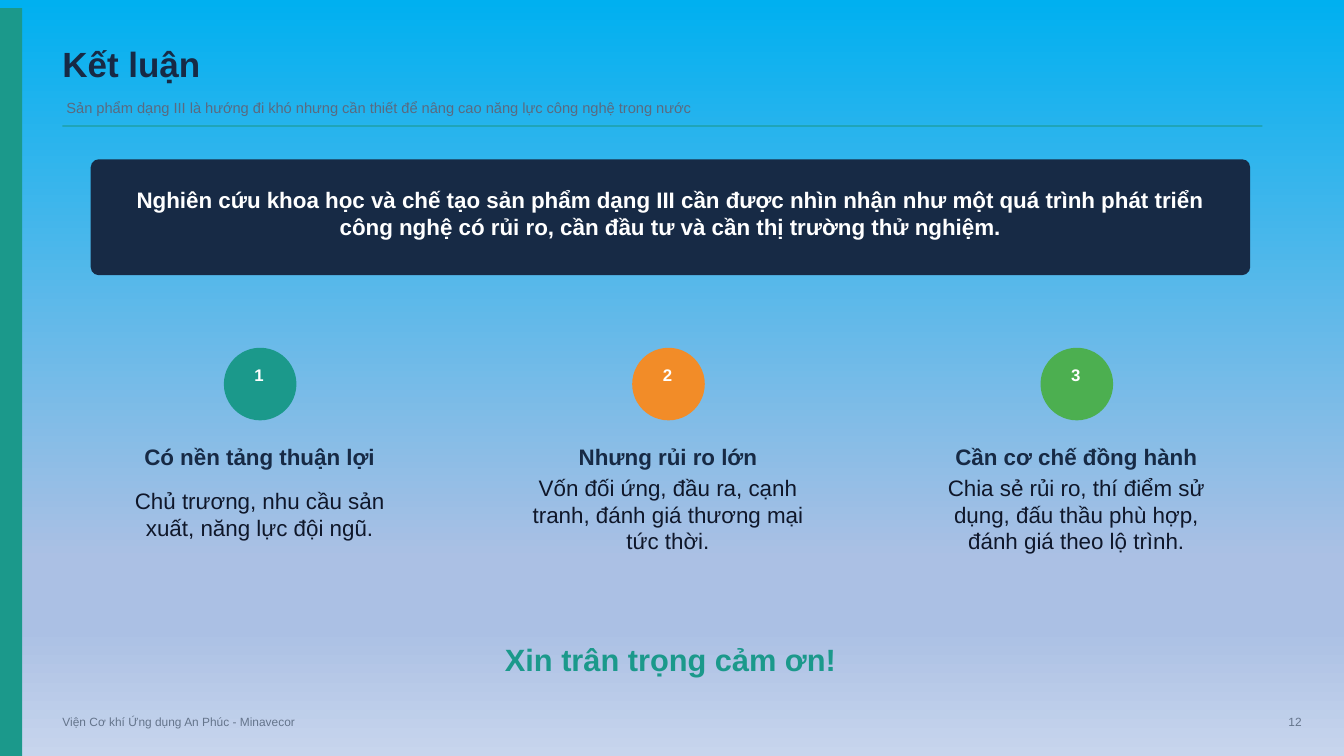
from lxml.etree import SubElement as Sub
from pptx import Presentation
from pptx.dml.color import RGBColor as RGB
from pptx.enum.shapes import MSO_CONNECTOR as Conn, MSO_SHAPE as Kind
from pptx.enum.text import MSO_ANCHOR as Anchor, PP_ALIGN as Align
from pptx.oxml.ns import qn
from pptx.util import Inches, Pt

TEAL = RGB(0x1B, 0x99, 0x8B)
NAVY = RGB(0x17, 0x2A, 0x45)
ORANGE = RGB(0xF2, 0x8C, 0x28)
GREEN = RGB(0x4C, 0xAF, 0x50)
GRAY = RGB(0x64, 0x74, 0x8B)
SLATE = RGB(0x5A, 0x6A, 0x80)
INK = RGB(0x0F, 0x17, 0x2A)
WHITE = RGB(0xFF, 0xFF, 0xFF)
SKY = [(0, "00B0F0"), (74, "ABC0E4"), (83, "ABC0E4"), (100, "C7D5ED")]

# Content
TITLE = "Kết luận"
LEAD = ("Sản phẩm dạng III là hướng đi khó nhưng cần thiết "
        "để nâng cao năng lực công nghệ trong nước")
CLAIM = ("Nghiên cứu khoa học và chế tạo sản phẩm dạng III cần được nhìn nhận "
         "như một quá trình phát triển công nghệ có rủi ro, "
         "cần đầu tư và cần thị trường thử nghiệm.")
POINTS = [
    (TEAL, "Có nền tảng thuận lợi",
     "Chủ trương, nhu cầu sản xuất, năng lực đội ngũ."),
    (ORANGE, "Nhưng rủi ro lớn",
     "Vốn đối ứng, đầu ra, cạnh tranh, đánh giá thương mại tức thời."),
    (GREEN, "Cần cơ chế đồng hành",
     "Chia sẻ rủi ro, thí điểm sử dụng, đấu thầu phù hợp, "
     "đánh giá theo lộ trình."),
]
THANKS = "Xin trân trọng cảm ơn!"
FOOT = "Viện Cơ khí Ứng dụng An Phúc - Minavecor"
PAGE = "12"

# Formats
HEAD = dict(size=Pt(25), color=NAVY, bold=True)
SUBHEAD = dict(size=Pt(10.5), color=SLATE)
BANNER = dict(size=Pt(16), color=WHITE, bold=True)
NUMBER = dict(size=Pt(12), color=WHITE, bold=True)
LABEL = dict(size=Pt(16), color=NAVY, bold=True)
BODY = dict(size=Pt(16), color=INK)
CLOSE = dict(size=Pt(22), color=TEAL, bold=True)
SMALL = dict(size=Pt(8.5), color=GRAY)

# Grid
LEFT = 0.62
FIRST, STEP = 1.1, 4.05


def add_text(slide, text, box, form, align=Align.LEFT):
    frame = slide.shapes.add_textbox(*map(Inches, box)).text_frame
    margins = {f"margin_{side}": 0 for side in ("left", "right", "top", "bottom")}
    setup = dict(word_wrap=True, vertical_anchor=Anchor.MIDDLE, **margins)
    for key, value in setup.items():
        setattr(frame, key, value)
    para = frame.paragraphs[0]
    para.alignment = align
    run = para.add_run()
    run.text = text
    for key, value in dict(form, name="Arial").items():
        if key == "color":
            run.font.color.rgb = value
        else:
            setattr(run.font, key, value)


def add_shape(slide, kind, box, color):
    shape = slide.shapes.add_shape(kind, *map(Inches, box))
    shape.shadow.inherit = False
    shape.fill.solid()
    shape.fill.fore_color.rgb = color
    shape.line.fill.background()
    return shape


def add_sky(slide):
    fill = slide.background.fill
    fill.gradient()
    fill.gradient_angle = 270
    stops = slide.element.find(".//" + qn("a:gsLst"))
    for stop in list(stops):
        stops.remove(stop)
    for place, color in SKY:
        stop = Sub(stops, qn("a:gs"), pos=str(place * 1000))
        Sub(stop, qn("a:srgbClr"), val=color)


def add_rule(slide):
    y = Inches(1.25)
    rule = slide.shapes.add_connector(
        Conn.STRAIGHT, Inches(LEFT), y, Inches(12.52), y)
    rule.line.color.rgb = TEAL
    rule.line.width = Pt(1)
    props = rule.element.spPr
    Sub(props.find(".//" + qn("a:srgbClr")), qn("a:alpha"), val="80000")
    Sub(props, qn("a:effectLst"))


def add_point(slide, index, color, label, body):
    left = FIRST + index * STEP
    add_shape(slide, Kind.OVAL, (left + 1.12, 3.45, 0.72, 0.72), color)
    parts = [
        (str(index + 1), 1.34, 3.64, 0.26, 0.16, NUMBER),
        (label, 0.05, 4.35, 2.85, 0.35, LABEL),
        (body, 0, 4.82, 2.95, 0.56, BODY),
    ]
    for text, inset, top, width, height, form in parts:
        box = (left + inset, top, width, height)
        add_text(slide, text, box, form, Align.CENTER)


def main():
    deck = Presentation()
    deck.slide_width, deck.slide_height = Inches(13.33), Inches(7.5)
    slide = deck.slides.add_slide(deck.slide_layouts[6])

    # Frame and heading
    add_sky(slide)
    add_shape(slide, Kind.RECTANGLE, (0, 0.08, 0.22, 7.42), TEAL)
    add_text(slide, TITLE, (LEFT, 0.35, 9.7, 0.55), HEAD)
    add_text(slide, LEAD, (0.66, 0.96, 9.7, 0.22), SUBHEAD)
    add_rule(slide)

    # Banner
    panel = add_shape(slide, Kind.ROUNDED_RECTANGLE, (0.9, 1.58, 11.5, 1.15), NAVY)
    panel.adjustments[0] = 0.07
    add_text(slide, CLAIM, (1.25, 1.93, 10.8, 0.37), BANNER, Align.CENTER)

    # Three points
    for index, point in enumerate(POINTS):
        add_point(slide, index, *point)

    # Closing and footer
    add_text(slide, THANKS, (3.2, 6.35, 6.9, 0.38), CLOSE, Align.CENTER)
    add_text(slide, FOOT, (LEFT, 7.05, 4.7, 0.22), SMALL)
    add_text(slide, PAGE, (12.43, 7.05, 0.48, 0.22), SMALL, Align.RIGHT)
    deck.save("out.pptx")


if __name__ == "__main__":
    main()
